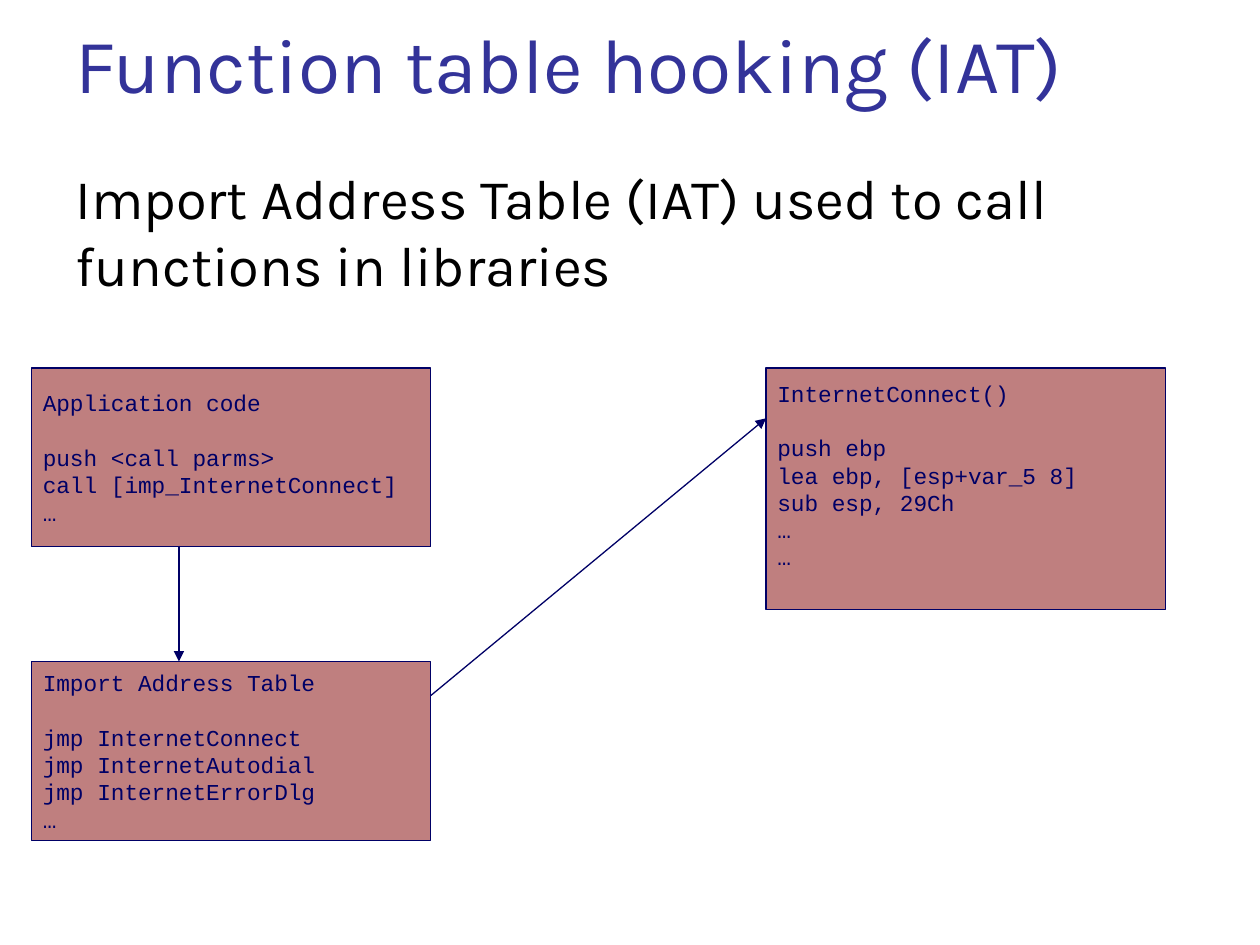
from lxml.etree import SubElement
from pptx import Presentation
from pptx.dml.color import RGBColor
from pptx.enum.shapes import MSO_CONNECTOR, MSO_SHAPE
from pptx.enum.text import MSO_ANCHOR, PP_ALIGN
from pptx.oxml.ns import qn
from pptx.util import Inches, Pt

NAVY = RGBColor(0x00, 0x00, 0x66)
MAROON = RGBColor(0x80, 0x00, 0x00)
TITLE_BLUE = RGBColor(0x33, 0x33, 0x99)
BLACK = RGBColor(0x00, 0x00, 0x00)

CODE_LINE = Pt(15.6)
BOX_WIDTH = 3.17
LEFT_COLUMN, RIGHT_COLUMN = 0.25, 6.08
UPPER_ROW, LOWER_ROW = 2.92, 5.25


def add_run(paragraph, text, font_name, size, color):
    run = paragraph.add_run()
    run.text = text
    run.font.name = font_name
    run.font.size = Pt(size)
    run.font.color.rgb = color


def add_text(slide, text, left, top, width, height, size, color):
    shape = slide.shapes.add_textbox(
        Inches(left), Inches(top), Inches(width), Inches(height))
    frame = shape.text_frame
    frame.word_wrap = True
    add_run(frame.paragraphs[0], text, "Karla", size, color)
    return frame


def add_code_box(slide, heading, code, left, top, height, bottom_inset=0.05):
    shape = slide.shapes.add_shape(
        MSO_SHAPE.RECTANGLE,
        Inches(left), Inches(top), Inches(BOX_WIDTH), Inches(height))
    shape.shadow.inherit = False
    shape.fill.solid()
    shape.fill.fore_color.rgb = MAROON
    color = shape._element.spPr.find(qn("a:solidFill")).find(qn("a:srgbClr"))
    SubElement(color, qn("a:alpha"), val="50000")
    shape.line.color.rgb = NAVY
    shape.line.width = Pt(0.75)

    frame = shape.text_frame
    frame.word_wrap = False
    frame.vertical_anchor = MSO_ANCHOR.MIDDLE
    frame.margin_left = frame.margin_right = Inches(0.09)
    frame.margin_top = Inches(0.05)
    frame.margin_bottom = Inches(bottom_inset)
    for index, text in enumerate([heading, *code]):
        paragraph = frame.add_paragraph() if index else frame.paragraphs[0]
        paragraph.alignment = PP_ALIGN.LEFT
        paragraph.line_spacing = CODE_LINE
        # The first line of code stands one line below the heading
        if index == 1:
            paragraph.space_before = CODE_LINE
        add_run(paragraph, text, "Courier New", 13, NAVY)


def add_arrow(slide, start, end):
    connector = slide.shapes.add_connector(
        MSO_CONNECTOR.STRAIGHT, *map(Inches, start + end))
    connector.line.color.rgb = NAVY
    connector.line.width = Pt(0.75)
    SubElement(connector.line._get_or_add_ln(), qn("a:tailEnd"), type="triangle")
    SubElement(connector._element.spPr, qn("a:effectLst"))


def main():
    presentation = Presentation()
    presentation.slide_width = Inches(10)
    presentation.slide_height = Inches(7.5)
    slide = presentation.slides.add_slide(presentation.slide_layouts[6])

    # Code boxes
    add_code_box(slide, "Application code",
                 ["push <call parms>", "call [imp_InternetConnect]", "…"],
                 LEFT_COLUMN, UPPER_ROW, 1.42)
    add_code_box(slide, "Import Address Table",
                 ["jmp InternetConnect", "jmp InternetAutodial",
                  "jmp InternetErrorDlg", "…"],
                 LEFT_COLUMN, LOWER_ROW, 1.42)
    add_code_box(slide, "InternetConnect()",
                 ["push ebp", "lea ebp, [esp+var_5 8]", "sub esp, 29Ch",
                  "…", "…"],
                 RIGHT_COLUMN, UPPER_ROW, 1.92, bottom_inset=0.27)

    # Call path
    add_arrow(slide, (1.42, 4.33), (1.42, LOWER_ROW))
    add_arrow(slide, (LEFT_COLUMN + BOX_WIDTH, 5.52), (RIGHT_COLUMN, 3.32))

    # Title and statement
    title = add_text(slide, "Function table hooking (IAT)",
                     0.5, 0.23, 9.2, 0.68, 44, TITLE_BLUE)
    title.vertical_anchor = MSO_ANCHOR.BOTTOM
    body = add_text(
        slide, "Import Address Table (IAT) used to call functions in libraries",
        0.5, 1.25, 9.17, 5.46, 32, BLACK)
    body.paragraphs[0].space_before = Pt(6.4)

    presentation.save("out.pptx")


if __name__ == "__main__":
    main()
